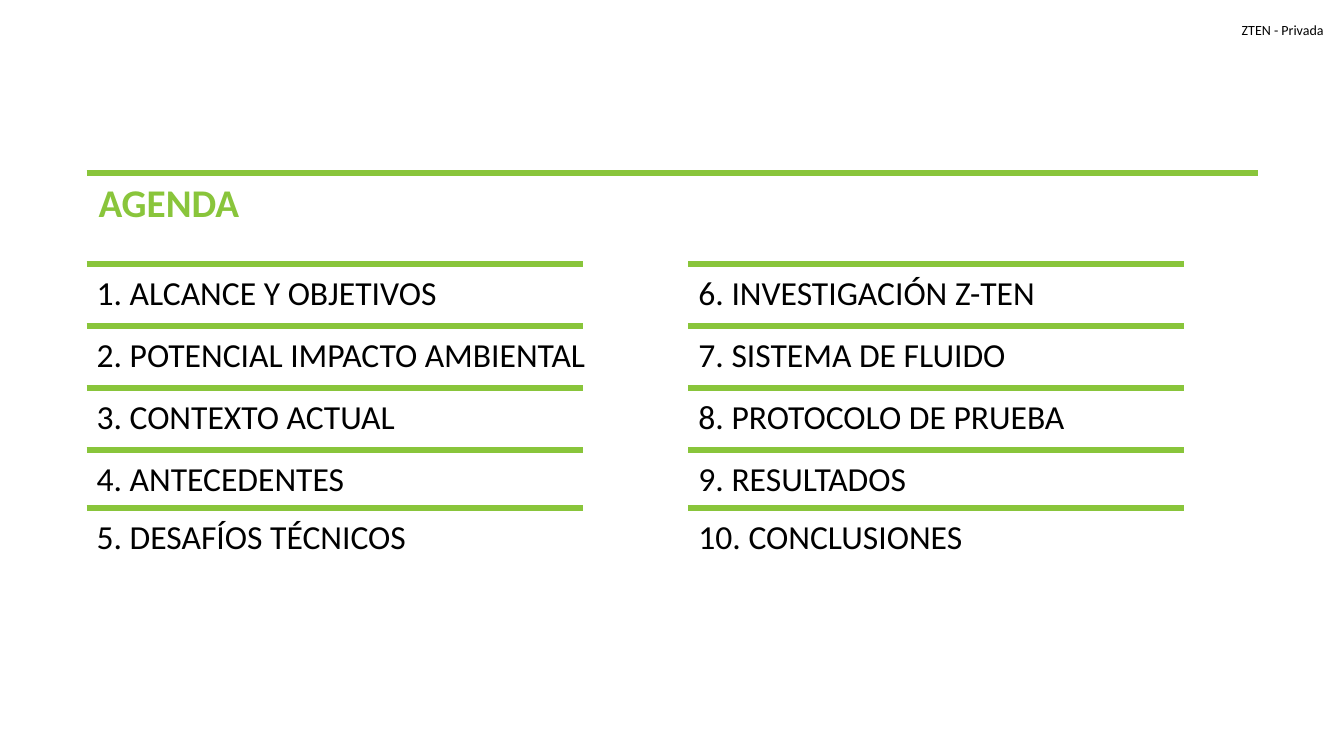
from pptx import Presentation
from pptx.dml.color import RGBColor
from pptx.enum.shapes import MSO_CONNECTOR as Connector
from pptx.enum.text import MSO_AUTO_SIZE as AutoSize
from pptx.util import Pt
from lxml.etree import SubElement
from pptx.oxml.ns import qn

COLORS = {"green": "89C53B", "black": "000000"}
LEFT_TOPICS = [
    "1. ALCANCE Y OBJETIVOS",
    "2. POTENCIAL IMPACTO AMBIENTAL",
    "3. CONTEXTO ACTUAL",
    "4. ANTECEDENTES",
    "5. DESAFÍOS TÉCNICOS",
]
RIGHT_TOPICS = [
    "6. INVESTIGACIÓN Z-TEN",
    "7. SISTEMA DE FLUIDO",
    "8. PROTOCOLO DE PRUEBA",
    "9. RESULTADOS",
    "10. CONCLUSIONES",
]
ROW_OFFSETS = [0, 44.2, 88.4, 132.6, 174.2]


def add_label(slide, box, words, size, color="black", bold=False, inset=None):
    """Write one line of text in the box (left, top, width, height)."""
    label = slide.shapes.add_textbox(*(Pt(length) for length in box))
    frame = label.text_frame
    frame.word_wrap = True
    frame.auto_size = AutoSize.SHAPE_TO_FIT_TEXT
    if inset is not None:
        frame.margin_left = frame.margin_right = Pt(inset)
        frame.margin_top = frame.margin_bottom = Pt(inset)
    line = frame.paragraphs[0]
    line.text = words
    line.font.name = "Calibri"
    line.font.size = Pt(size)
    line.font.bold = bold
    line.font.color.rgb = RGBColor.from_string(COLORS[color])


def add_rule(slide, left, top, width):
    """Draw a green horizontal rule."""
    rule = slide.shapes.add_connector(
        Connector.STRAIGHT, Pt(left), Pt(top), Pt(left + width), Pt(top))
    rule.line.color.rgb = RGBColor.from_string(COLORS["green"])
    rule.line.width = Pt(4.5)
    SubElement(rule._element.spPr, qn("a:effectLst"))


def add_heading(slide, left, top, width):
    """Place the agenda heading under its full-width rule."""
    add_label(slide, (left + 1.4, top, 480, 41), "AGENDA", 28, "green", True)
    add_rule(slide, left, top, width)


def add_topics(slide, left, top, width, topics):
    """Stack a column of topics, each under its own rule."""
    for offset, topic in zip(ROW_OFFSETS, topics):
        add_rule(slide, left, top + offset, width)
        add_label(slide, (left, top + offset + 2.2, width + 20, 36), topic, 24)


def main():
    """Build and save the agenda slide."""
    deck = Presentation()
    deck.slide_width, deck.slide_height = Pt(960), Pt(540)
    slide = deck.slides.add_slide(deck.slide_layouts[6])
    add_label(slide, (887, 15.1, 66, 12.2), "ZTEN - Privada", 10, inset=0)
    add_heading(slide, 61.9, 123.8, 836.7)
    for left, topics in ((61.9, LEFT_TOPICS), (491.8, RIGHT_TOPICS)):
        add_topics(slide, left, 188.6, 354.2, topics)
    deck.save("out.pptx")


if __name__ == "__main__":
    main()
